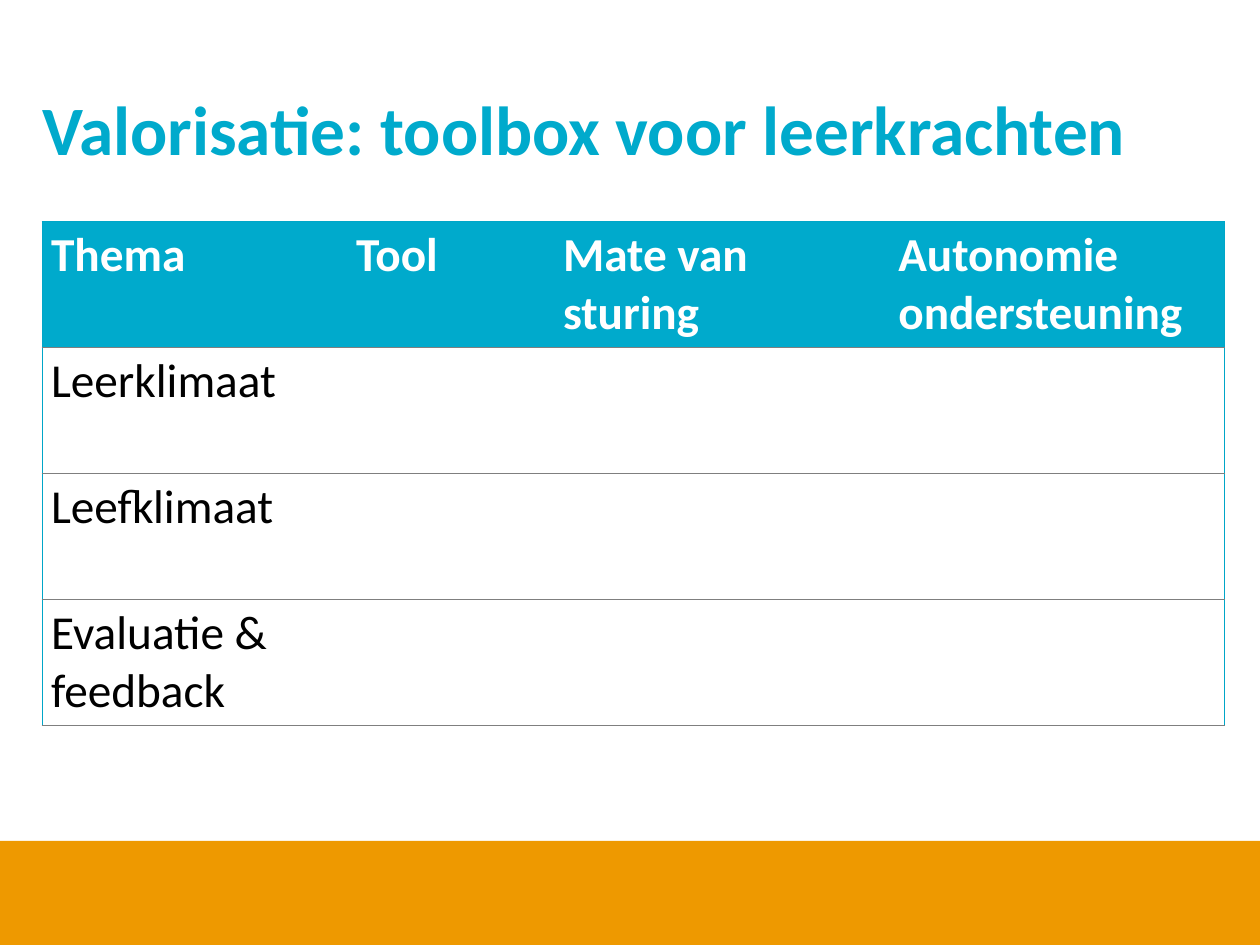
from lxml import etree
from pptx import Presentation
from pptx import util as u
from pptx.dml.color import RGBColor
from pptx.enum import shapes, text
from pptx.oxml.ns import qn

CYAN, EDGE, GREY = "00AACC", "00A6C8", "7F7F7F"
ORANGE, WHITE, BLACK = "EE9900", "FFFFFF", "000000"
HEADERS = ["Thema", "Tool", "Mate van sturing", "Autonomie ondersteuning"]
THEMES = ["Leerklimaat", "Leefklimaat", "Evaluatie & feedback"]
COL_WIDTHS = [6.15, 4.17, 6.76, 6.76]
ROW_HEIGHT = 2.54


def rgb(value):
    return RGBColor.from_string(value)


def set_attrs(obj, values):
    for name, value in values.items():
        setattr(obj, name, value)


def write(tf, content, size, color, bold):
    p = tf.paragraphs[0]
    r = p.add_run()
    r.text = content
    set_attrs(r.font, dict(name="Calibri", size=u.Pt(size), bold=bold))
    r.font.color.rgb = rgb(color)
    return p


def add_band(s):
    sp = s.shapes.add_shape(shapes.MSO_SHAPE.RECTANGLE, 0, u.Cm(16.95), u.Cm(25.4), u.Cm(2.1))
    sp.shadow.inherit = False
    sp.fill.solid()
    sp.fill.fore_color.rgb = rgb(ORANGE)
    sp.line.fill.background()


def add_title(s, content):
    sp = s.shapes.title
    set_attrs(sp, dict(left=u.Cm(0.85), top=u.Cm(1.04), width=u.Cm(22.81), height=u.Cm(2.4)))
    tf = sp.text_frame
    set_attrs(tf, dict(margin_left=0, margin_right=0, margin_top=0, margin_bottom=0,
                       word_wrap=True, auto_size=text.MSO_AUTO_SIZE.NONE,
                       vertical_anchor=text.MSO_ANCHOR.BOTTOM))
    p = write(tf, content, 39.6, CYAN, True)
    set_attrs(p, dict(alignment=text.PP_ALIGN.LEFT, line_spacing=0.9))


def set_border(cell, side, color):
    ln = etree.SubElement(cell._tc.get_or_add_tcPr(), qn("a:ln" + side), w=str(u.Pt(0.75)))
    if color:
        fill = etree.SubElement(ln, qn("a:solidFill"))
        etree.SubElement(fill, qn("a:srgbClr"), val=color)
    else:
        etree.SubElement(ln, qn("a:noFill"))


def format_cell(cell, row, col):
    set_attrs(cell, dict(margin_left=u.Cm(0.18), margin_right=u.Cm(0.18),
                         margin_top=u.Cm(0.1), margin_bottom=u.Cm(0.1)))
    # Outer edges and row rules only; columns are not separated
    borders = {"L": EDGE if col == 0 else None,
               "R": EDGE if col == len(HEADERS) - 1 else None,
               "T": GREY if row else EDGE,
               "B": GREY}
    for side, color in borders.items():
        set_border(cell, side, color)
    if row == 0:
        cell.fill.solid()
        cell.fill.fore_color.rgb = rgb(CYAN)
    else:
        cell.fill.background()


def add_theme_table(s):
    rows = [HEADERS] + [[theme, "", "", ""] for theme in THEMES]
    table = s.shapes.add_table(len(rows), len(HEADERS), u.Cm(0.85), u.Cm(4.47),
                               u.Cm(sum(COL_WIDTHS)), u.Cm(ROW_HEIGHT * len(rows))).table
    table.horz_banding = False
    for column, width in zip(table.columns, COL_WIDTHS):
        column.width = u.Cm(width)
    for i, row in enumerate(rows):
        table.rows[i].height = u.Cm(ROW_HEIGHT)
        for j, content in enumerate(row):
            cell = table.cell(i, j)
            format_cell(cell, i, j)
            if content:
                write(cell.text_frame, content, 27, BLACK if i else WHITE, i == 0)


def main():
    prs = Presentation()
    set_attrs(prs, dict(slide_width=u.Cm(25.4), slide_height=u.Cm(19.05)))
    s = prs.slides.add_slide(prs.slide_layouts[5])
    # Footer band, title, then table
    add_band(s)
    add_title(s, "Valorisatie: toolbox voor leerkrachten")
    add_theme_table(s)
    prs.save("out.pptx")


if __name__ == "__main__":
    main()
